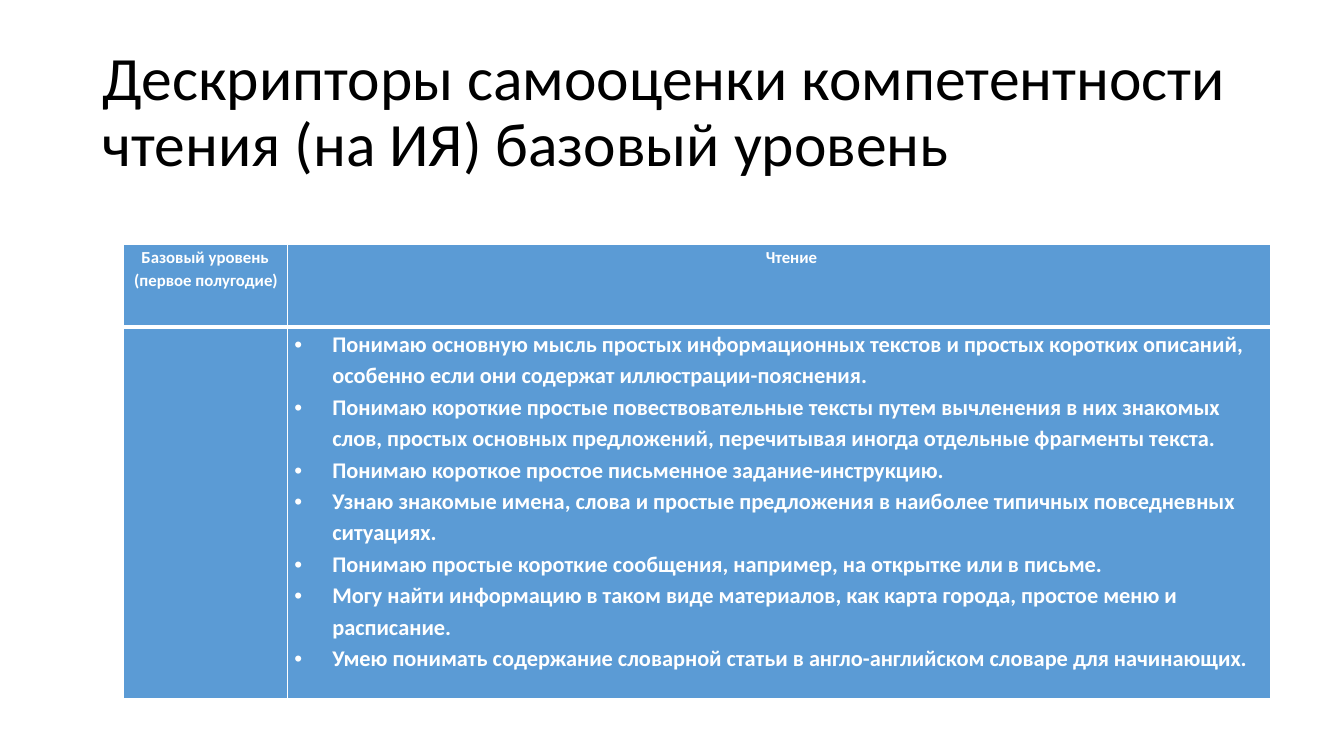
from dataclasses import dataclass

from lxml import etree
from pptx import Presentation
from pptx.dml.color import RGBColor
from pptx.enum.text import MSO_ANCHOR, MSO_AUTO_SIZE, PP_ALIGN
from pptx.oxml.ns import qn
from pptx.util import Pt

LEFT, CENTER = PP_ALIGN.LEFT, PP_ALIGN.CENTER
MIDDLE = MSO_ANCHOR.MIDDLE
NO_AUTOFIT = MSO_AUTO_SIZE.NONE


@dataclass(frozen=True)
class Theme:
    font: str = "Calibri"
    ink: str = "000000"
    white: str = "FFFFFF"
    blue: str = "5B9BD5"
    title_size: int = 44
    header_size: int = 12
    body_size: int = 16


theme = Theme()


def format_paragraph(paragraph, size, color, bold, align, spacing):
    paragraph.alignment = align
    paragraph.line_spacing = spacing
    for run in paragraph.runs:
        run.font.name = theme.font
        run.font.size = Pt(size)
        run.font.bold = bold
        run.font.color.rgb = RGBColor.from_string(color)


def add_borders(cell, widths):
    properties = cell._tc.get_or_add_tcPr()
    for position, (side, width) in enumerate(widths.items()):
        line = etree.Element(qn(f"a:{side}"), w=str(Pt(width)))
        fill = etree.SubElement(line, qn("a:solidFill"))
        etree.SubElement(fill, qn("a:srgbClr"), val=theme.white)
        properties.insert(position, line)


prs = Presentation()
prs.slide_width, prs.slide_height = Pt(960), Pt(540)
slide = prs.slides.add_slide(prs.slide_layouts[5])

title = slide.shapes.title
title.left, title.top, title.width, title.height = Pt(66), Pt(28.75), Pt(828), Pt(104.4)
title.text_frame.text = "Дескрипторы самооценки компетентности чтения (на ИЯ) базовый уровень"
title.text_frame.vertical_anchor = MIDDLE
title.text_frame.auto_size = NO_AUTOFIT
format_paragraph(title.text_frame.paragraphs[0], theme.title_size, theme.ink, False, LEFT, 0.9)

descriptors = [
    "Понимаю основную мысль простых информационных текстов и простых коротких описаний, особенно если они содержат иллюстрации-пояснения.",
    "Понимаю короткие простые повествовательные тексты путем вычленения в них знакомых слов, простых основных предложений, перечитывая иногда отдельные фрагменты текста.",
    "Понимаю короткое простое письменное задание-инструкцию.",
    "Узнаю знакомые имена, слова и простые предложения в наиболее типичных повседневных ситуациях.",
    "Понимаю простые короткие сообщения, например, на открытке или в письме.",
    "Могу найти информацию в таком виде материалов, как карта города, простое меню и расписание.",
    "Умею понимать содержание словарной статьи в англо-английском словаре для начинающих.",
]

column_widths = [117.2, 702.4]
row_heights = [59, 265.7]
levels = slide.shapes.add_table(
    2, 2, Pt(88), Pt(174.4), Pt(sum(column_widths)), Pt(sum(row_heights))
).table
for column, width in zip(levels.columns, column_widths):
    column.width = Pt(width)
for row, height in zip(levels.rows, row_heights):
    row.height = Pt(height)

for row_index, row in enumerate(levels.rows):
    top, bottom = (1, 3) if row_index == 0 else (3, 1)
    for cell in row.cells:
        cell.margin_left = cell.margin_right = Pt(5.2)
        cell.margin_top = cell.margin_bottom = Pt(0)
        cell.fill.solid()
        cell.fill.fore_color.rgb = RGBColor.from_string(theme.blue)
        add_borders(cell, {"lnL": 1, "lnR": 1, "lnT": top, "lnB": bottom})

level_header, reading_header = levels.cell(0, 0), levels.cell(0, 1)
level_header.text_frame.text = "Базовый уровень\n (первое полугодие)"
reading_header.text_frame.text = "Чтение"
for header, alignments in ((level_header, [CENTER, LEFT]), (reading_header, [CENTER])):
    for paragraph, align in zip(header.text_frame.paragraphs, alignments):
        format_paragraph(paragraph, theme.header_size, theme.white, True, align, 1.15)
reading_header.text_frame.paragraphs[0]._p.get_or_add_pPr().set("marL", str(Pt(18)))

reading = levels.cell(1, 1).text_frame
reading.text = "\n".join(descriptors)
for paragraph in reading.paragraphs:
    format_paragraph(paragraph, theme.body_size, theme.white, True, LEFT, 1.15)
    properties = paragraph._p.get_or_add_pPr()
    properties.set("marL", str(Pt(27)))
    properties.set("indent", str(-Pt(27)))
    etree.SubElement(properties, qn("a:buFont"), typeface="Arial")
    etree.SubElement(properties, qn("a:buChar"), char="•")

prs.save("out.pptx")
